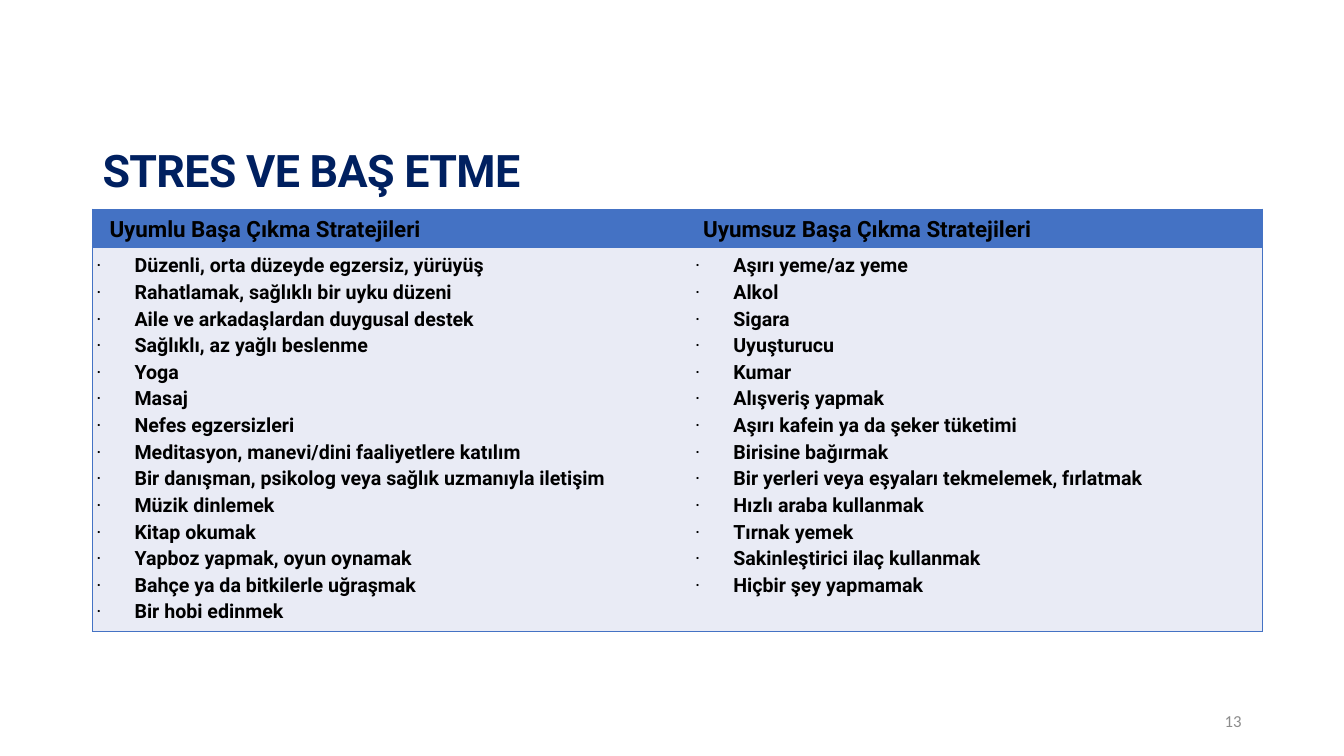
import pptx
import pptx.dml.color
import pptx.enum.text
import pptx.oxml
import pptx.oxml.ns
import pptx.util
from lxml import etree

Cm, Pt = pptx.util.Cm, pptx.util.Pt
ALIGN = pptx.enum.text.PP_ALIGN
MIDDLE = pptx.enum.text.MSO_ANCHOR.MIDDLE
qn = pptx.oxml.ns.qn

COLORS = {"title": "002060", "head": "4472C4", "body": "E9EBF5",
          "text": "000000", "page": "8C8C8C"}

LISTS = {
    "Uyumlu Başa Çıkma Stratejileri": [
        "Düzenli, orta düzeyde egzersiz, yürüyüş",
        "Rahatlamak, sağlıklı bir uyku düzeni",
        "Aile ve arkadaşlardan duygusal destek",
        "Sağlıklı, az yağlı beslenme",
        "Yoga",
        "Masaj",
        "Nefes egzersizleri",
        "Meditasyon, manevi/dini faaliyetlere katılım",
        "Bir danışman, psikolog veya sağlık uzmanıyla iletişim",
        "Müzik dinlemek",
        "Kitap okumak",
        "Yapboz yapmak, oyun oynamak",
        "Bahçe ya da bitkilerle uğraşmak",
        "Bir hobi edinmek",
    ],
    "Uyumsuz Başa Çıkma Stratejileri": [
        "Aşırı yeme/az yeme",
        "Alkol",
        "Sigara",
        "Uyuşturucu",
        "Kumar",
        "Alışveriş yapmak",
        "Aşırı kafein ya da şeker tüketimi",
        "Birisine bağırmak",
        "Bir yerleri veya eşyaları tekmelemek, fırlatmak",
        "Hızlı araba kullanmak",
        "Tırnak yemek",
        "Sakinleştirici ilaç kullanmak",
        "Hiçbir şey yapmamak",
    ],
}


def color(name):
    return pptx.dml.color.RGBColor.from_string(COLORS[name])


def add_run(para, text, size, hue, face="Roboto", bold=True):
    run = para.add_run()
    run.text = text
    font = run.font
    font.size, font.name, font.bold = Pt(size), face, bold
    font.color.rgb = color(hue)
    return run


def place(shape, box):
    shape.left, shape.top, shape.width, shape.height = map(Cm, box)


def add_title(slide, box):
    title = slide.shapes.title
    place(title, box)
    frame = title.text_frame
    frame.vertical_anchor = MIDDLE
    para = frame.paragraphs[0]
    para.alignment, para.line_spacing = ALIGN.LEFT, 0.9
    run = add_run(para, "STRES VE BAŞ ETME", 32, "title")
    run.font._element.set("spc", "-50")


def indent(para, left, first):
    props = para._p.get_or_add_pPr()
    props.set("marL", str(Cm(left)))
    props.set("indent", str(Cm(first)))
    return props


def add_bullet(props):
    etree.SubElement(props, qn("a:buSzPts"), val="1000")
    etree.SubElement(props, qn("a:buFont"), typeface="Roboto")
    etree.SubElement(props, qn("a:buChar"), char="·")


def draw_edges(cell, shown):
    props = cell._tc.get_or_add_tcPr()
    for side in "LRTB":
        line = etree.SubElement(props, qn("a:ln" + side), w=str(Pt(1)))
        if side in shown:
            fill = etree.SubElement(line, qn("a:solidFill"))
            etree.SubElement(fill, qn("a:srgbClr"), val=COLORS["head"])
        else:
            etree.SubElement(line, qn("a:noFill"))


def style_cell(cell, shown, hue):
    draw_edges(cell, shown)
    cell.fill.solid()
    cell.fill.fore_color.rgb = color(hue)
    cell.margin_left = cell.margin_right = Cm(0.1)
    cell.margin_top = cell.margin_bottom = Cm(0.1)


def add_lists(slide, box, widths, heights):
    table = slide.shapes.add_table(2, 2, *map(Cm, box)).table
    table.horz_banding = False
    for col, width in zip(table.columns, widths):
        col.width = Cm(width)
    for row, height in zip(table.rows, heights):
        row.height = Cm(height)

    for num, (head, items) in enumerate(LISTS.items()):
        outer = "LR"[num] + "TB"
        # Heading
        cell = table.cell(0, num)
        style_cell(cell, outer, "head")
        para = cell.text_frame.paragraphs[0]
        para.alignment, para.line_spacing = ALIGN.JUSTIFY, 1.15
        para.space_after = Pt(8)
        indent(para, (0.84, 0.71)[num], -0.51)
        add_run(para, head, 16, "text")
        # Strategies
        cell = table.cell(1, num)
        style_cell(cell, outer, "body")
        frame = cell.text_frame
        for pos, item in enumerate(items):
            para = frame.add_paragraph() if pos else frame.paragraphs[0]
            para.alignment, para.line_spacing = ALIGN.JUSTIFY, 1.15
            add_bullet(indent(para, 0.96, -0.96))
            add_run(para, item, 14, "text")


def add_page(slide, box):
    frame = slide.shapes.add_textbox(*map(Cm, box)).text_frame
    frame.word_wrap = True
    frame.vertical_anchor = MIDDLE
    para = frame.paragraphs[0]
    para.alignment = ALIGN.RIGHT
    add_run(para, "13", 12, "page", "Calibri", False)


def main():
    deck = pptx.Presentation()
    deck.slide_width, deck.slide_height = Cm(33.87), Cm(19.05)
    slide = deck.slides.add_slide(deck.slide_layouts[5])
    left = 2.33
    add_title(slide, (left, 2.51, 29.21, 3.68))
    add_lists(slide, (left, 5.27, 29.49, 10.57), (15.09, 14.4), (0.89, 9.68))
    add_page(slide, (23.92, 17.66, 7.62, 1.01))
    deck.save("out.pptx")


if __name__ == "__main__":
    main()
